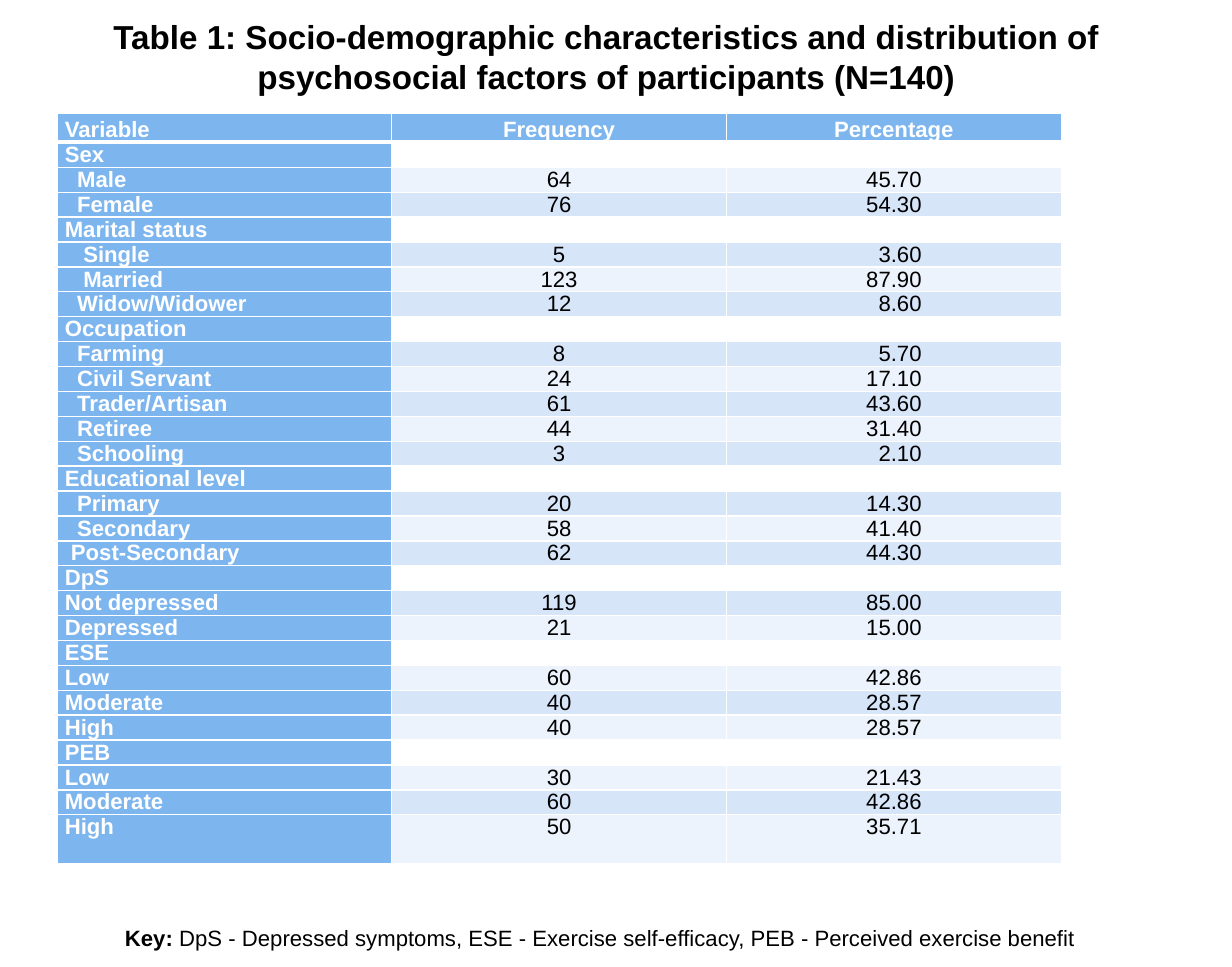
from typing import NamedTuple

from lxml.etree import SubElement as Sub
from pptx import Presentation
from pptx.dml.color import RGBColor as Rgb
from pptx.enum.text import MSO_ANCHOR as Anchor, MSO_AUTO_SIZE as Fit, PP_ALIGN as Align
from pptx.oxml.ns import qn
from pptx.util import Inches, Pt

COLORS = {"blue": "7DB6EF", "pale": "ECF3FC", "light": "D7E5F9",
          "white": "FFFFFF", "black": "000000"}
FONT = "Arial"
PAD = 0.07
SPACE = 0.054  # width of one space at 14 pt


class Row(NamedTuple):
    label: str
    count: str = ""
    share: str = ""
    step: int = 0  # indent of the label, in spaces


HEAD = Row("Variable", "Frequency", "Percentage")
ROWS = [
    Row("Sex"),
    Row("Male", "64", "45.70", 2),
    Row("Female", "76", "54.30", 2),
    Row("Marital status"),
    Row("Single", "5", "3.60", 3),
    Row("Married", "123", "87.90", 3),
    Row("Widow/Widower", "12", "8.60", 2),
    Row("Occupation"),
    Row("Farming", "8", "5.70", 2),
    Row("Civil Servant", "24", "17.10", 2),
    Row("Trader/Artisan", "61", "43.60", 2),
    Row("Retiree", "44", "31.40", 2),
    Row("Schooling", "3", "2.10", 2),
    Row("Educational level"),
    Row("Primary", "20", "14.30", 2),
    Row("Secondary", "58", "41.40", 2),
    Row("Post-Secondary", "62", "44.30", 1),
    Row("DpS"),
    Row("Not depressed", "119", "85.00"),
    Row("Depressed", "21", "15.00"),
    Row("ESE"),
    Row("Low", "60", "42.86"),
    Row("Moderate", "40", "28.57"),
    Row("High", "40", "28.57"),
    Row("PEB"),
    Row("Low", "30", "21.43"),
    Row("Moderate", "60", "42.86"),
    Row("High", "50", "35.71"),
]


def style(para, size: float, color: str, bold: bool | None = None) -> None:
    font = para.font
    font.name, font.size, font.bold = FONT, Pt(size), bold
    font.color.rgb = Rgb.from_string(COLORS[color])


def place(shape, left: float, top: float, width: float, height: float) -> None:
    shape.left, shape.top = Inches(left), Inches(top)
    shape.width, shape.height = Inches(width), Inches(height)


def edge(cell, top: float, base: float) -> None:
    """Draw white borders; they must come before the fill."""
    props = cell._tc.get_or_add_tcPr()
    sides = {"lnL": 1, "lnR": 1, "lnT": top, "lnB": base}
    for spot, (side, width) in enumerate(sides.items()):
        line = Sub(props, qn(f"a:{side}"), w=str(Pt(width)))
        Sub(Sub(line, qn("a:solidFill")), qn("a:srgbClr"), val=COLORS["white"])
        props.insert(spot, line)


def write(cell, text: str, fill: str, color: str, bold: bool,
          center: bool, shift: float = 0) -> None:
    cell.margin_left, cell.margin_right = Inches(PAD + shift), Inches(PAD)
    cell.margin_top = cell.margin_bottom = 0
    cell.vertical_anchor = Anchor.TOP
    cell.fill.solid()
    cell.fill.fore_color.rgb = Rgb.from_string(COLORS[fill])
    para = cell.text_frame.paragraphs[0]
    para.alignment = Align.CENTER if center else Align.LEFT
    if text:
        para.add_run().text = text
    else:
        Sub(para._p, qn("a:endParaRPr"), sz="1400")  # keeps empty rows low
    style(para, 14, color, bold)


def fill_row(table, num: int, row: Row) -> None:
    head = num == 0
    band = "blue" if head else "pale" if num % 2 == 0 else "light"
    if not row.count:
        band = "white"
    for col, text in enumerate((row.label, row.count, row.share)):
        cell = table.cell(num, col)
        if col == 0:
            write(cell, text, "blue", "white", True, False, row.step * SPACE)
        else:
            # Short shares move right so that the decimal points line up
            shift = 2 * SPACE if col == 2 and len(text) == 4 else 0
            write(cell, text, band, "white" if head else "black", head, True, shift)
        if head:
            para = cell.text_frame.paragraphs[0]
            para.line_spacing, para.space_after = 1.15, Pt(10)
        edge(cell, 3 if num == 1 else 1, 3 if head else 1)


def main() -> None:
    deck = Presentation()
    deck.slide_width, deck.slide_height = Inches(10.83), Inches(8.5)
    slide = deck.slides.add_slide(deck.slide_layouts[5])

    # Title
    title = slide.shapes.title
    place(title, 0.33, 0.08, 10, 0.83)
    frame = title.text_frame
    frame.text = ("Table 1: Socio-demographic characteristics and distribution of "
                  "psychosocial factors of participants (N=140)")
    frame.auto_size, frame.vertical_anchor = Fit.NONE, Anchor.MIDDLE
    frame.paragraphs[0].alignment = Align.CENTER
    style(frame.paragraphs[0], 21, "black", True)

    # Table
    lines = [HEAD, *ROWS]
    table = slide.shapes.add_table(len(lines), 3, Inches(0.5), Inches(1),
                                   Inches(8.83), Inches(6.6)).table
    table.horz_banding = False
    for num, row in enumerate(lines):
        table.rows[num].height = Inches(0.21)
        fill_row(table, num, row)
    table.rows[0].height = Inches(0.23)
    table.rows[len(ROWS)].height = Inches(0.43)

    # Key
    key = slide.shapes.add_textbox(Inches(1), Inches(8.08), Inches(9), Inches(0.34))
    key.text_frame.word_wrap = True
    para = key.text_frame.paragraphs[0]
    style(para, 14, "black")
    parts = {"Key: ": True,
             "DpS - Depressed symptoms, ESE - Exercise self-efficacy, "
             "PEB - Perceived exercise benefit": False}
    for text, bold in parts.items():
        run = para.add_run()
        run.text, run.font.bold = text, bold

    deck.save("out.pptx")


if __name__ == "__main__":
    main()
